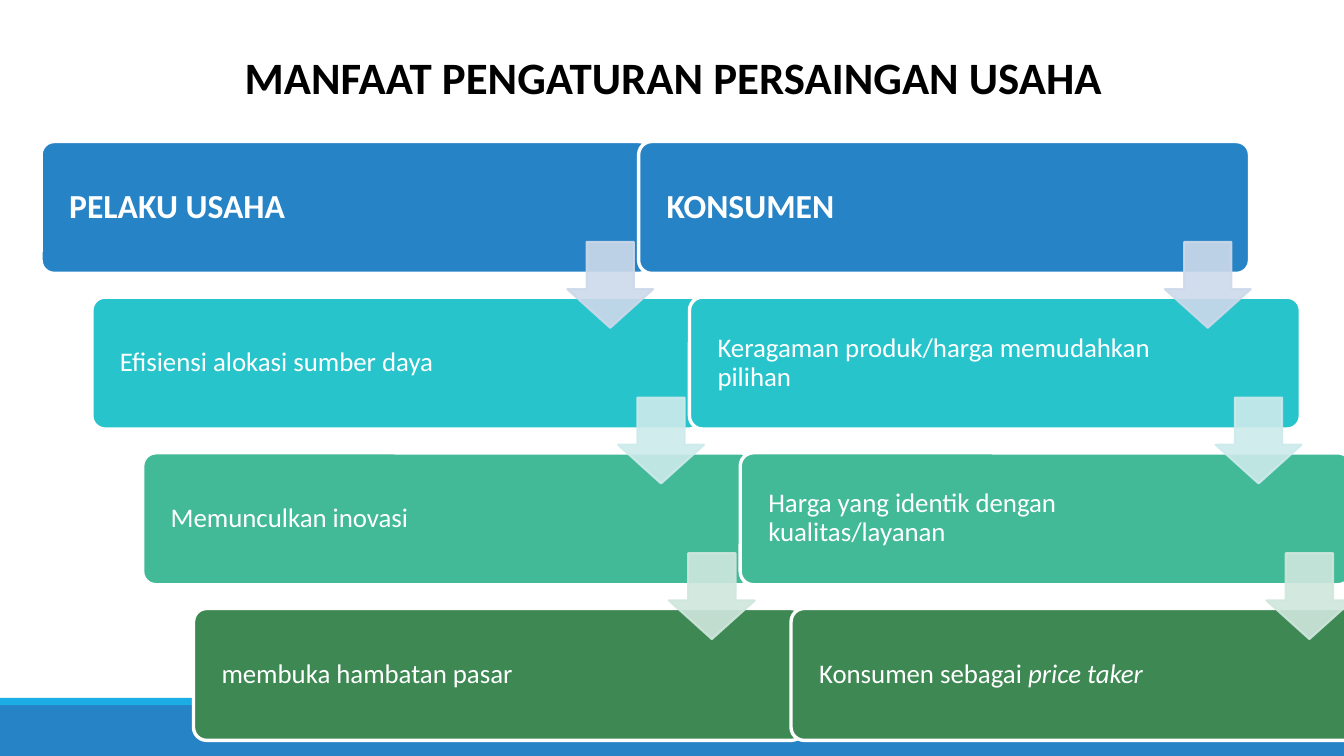
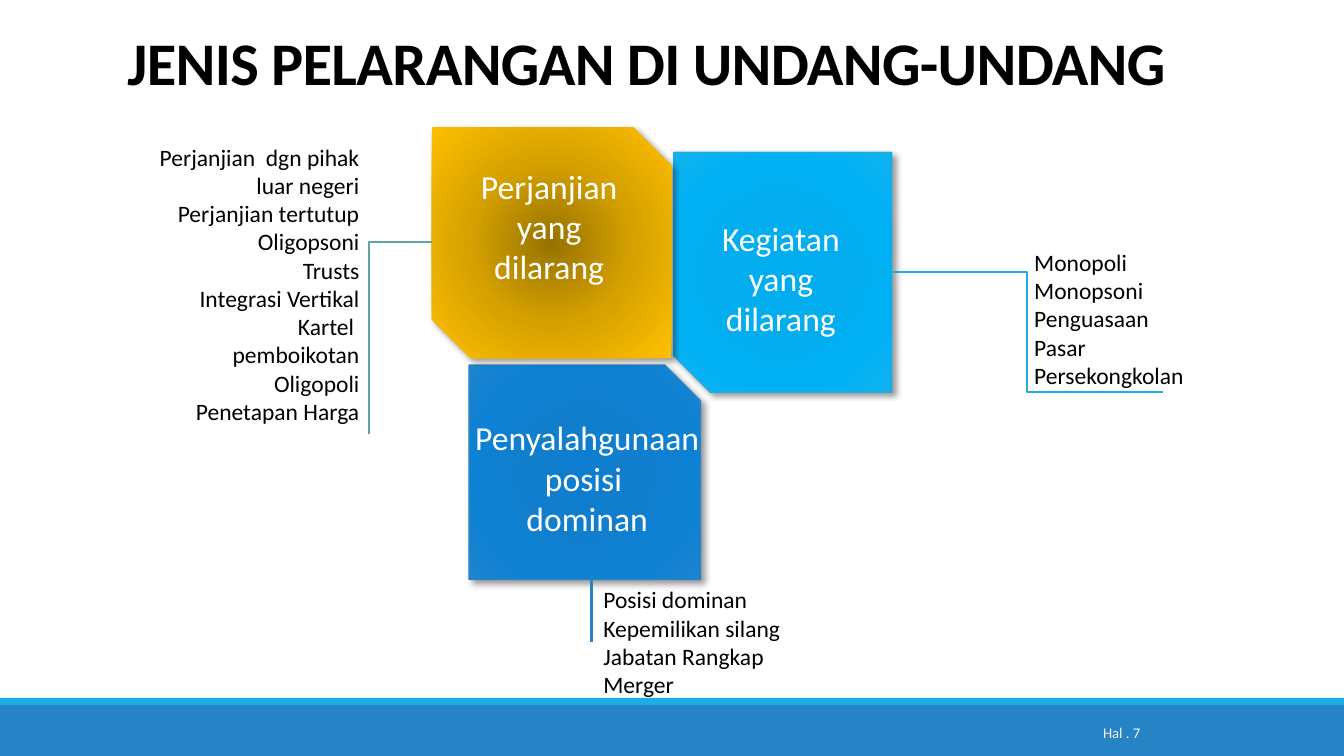
from pptx import Presentation
from pptx.dml.color import RGBColor
from pptx.enum.shapes import MSO_CONNECTOR, MSO_SHAPE
from pptx.enum.text import MSO_ANCHOR, PP_ALIGN
from pptx.oxml import parse_xml
from pptx.oxml.ns import nsdecls, qn
from pptx.oxml.xmlchemy import OxmlElement
from pptx.util import Inches, Pt

RECT, ROUND = MSO_SHAPE.RECTANGLE, MSO_SHAPE.ROUNDED_RECTANGLE
DOWN_ARROW = MSO_SHAPE.DOWN_ARROW
SNIP_ONE, SNIP_DIAGONAL = MSO_SHAPE.SNIP_1_RECTANGLE, MSO_SHAPE.SNIP_2_DIAG_RECTANGLE
STRAIGHT, ELBOW = MSO_CONNECTOR.STRAIGHT, MSO_CONNECTOR.ELBOW
LEFT, CENTER, RIGHT = PP_ALIGN.LEFT, PP_ALIGN.CENTER, PP_ALIGN.RIGHT
TOP, MIDDLE, BOTTOM = MSO_ANCHOR.TOP, MSO_ANCHOR.MIDDLE, MSO_ANCHOR.BOTTOM

WIDTH, HEIGHT = Inches(11.11), Inches(6.25)
FONT = "Calibri"
BLUE, SKY, WHITE, BLACK = "2683C6", "1CADE4", "FFFFFF", "000000"
PALE, TEAL = "F2F2F2", "62A39F"

PANEL_LEFT, PANEL_TOP = 3.06, 18.72
PANEL_WIDTH, PANEL_HEIGHT = 45.45, 17.44
CASCADE_STEP, ROW_STEP, SHIFT = 44.46, 20.59, 3.78
PANEL_COLORS = [BLUE, "28C4CC", "42BA97", "3E8853"]
ARROW_COLORS = ["CDD9EA", "CDEAEC", "CFE7DD"]
CASCADES = [
    ["PELAKU USAHA", "Efisiensi alokasi sumber daya", "Memunculkan inovasi",
     "membuka hambatan pasar"],
    ["KONSUMEN", "Keragaman produk/harga memudahkan pilihan",
     "Harga yang identik dengan kualitas/layanan",
     ("Konsumen sebagai ", "price taker")],
]

TILES = [
    (SNIP_ONE, (34.92, 48.32, 17.19, 28.32), 0, BLUE,
     [(0, "0D7ECF"), (34, "117ECD"), (70, "0D81D4"), (100, "1E84CE")]),
    (SNIP_ONE, (50.14, 20.16, 16.2, 31.68), 180, SKY,
     [(0, "00ADEF"), (34, "03ADEE"), (70, "00B1F5"), (100, "12B1EE")]),
    (SNIP_DIAGONAL, (32.13, 16.8, 17.82, 30.56), 0, None,
     [(0, "977200"), (50, "D7A200"), (100, "FFC000")]),
]
TILE_LABELS = [
    ((33.75, 21.12, 14.22, 17.76), ["Perjanjian yang dilarang"]),
    ((52.21, 28, 11.79, 17.76), ["Kegiatan yang dilarang"]),
    ((34.2, 54.4, 18.99, 17.76), ["Penyalahgunaan posisi ", "dominan"]),
]
DETAILS = [
    ((10.98, 18.08, 16.65, 39.36), RIGHT,
     ["Perjanjian  dgn pihak luar negeri", "Perjanjian tertutup", "Oligopsoni",
      "Trusts", "Integrasi Vertikal", "Kartel ", "pemboikotan", "Oligopoli",
      "Penetapan Harga"]),
    ((76.06, 32, 13.95, 20.48), LEFT,
     ["Monopoli", "Monopsoni", "Penguasaan Pasar", "Persekongkolan"]),
    ((44.01, 76.64, 16.11, 16.64), LEFT,
     ["Posisi dominan", "Kepemilikan silang", "Jabatan Rangkap", "Merger"]),
]
LINKS = [
    (ELBOW, (32.13, 32, 27.45, 57.44), TEAL, "bentConnector2"),
    (ELBOW, (66.34, 36, 86.5, 51.84), SKY, "bentConnector3"),
    (STRAIGHT, (44.01, 76, 44.01, 84.96), BLUE, "line"),
]


def rgb(value):
    return RGBColor.from_string(value)


def shares(box):
    return [round(side * part / 100) for side, part in zip((WIDTH, HEIGHT) * 2, box)]


def set_alpha(color_parent, percent):
    alpha = OxmlElement("a:alpha")
    alpha.set("val", str(percent * 1000))
    color_parent.find(".//" + qn("a:srgbClr")).append(alpha)


def write(frame, lines, size, color, align=LEFT, anchor=TOP, bold=False, leading=None):
    frame.word_wrap = True
    frame.vertical_anchor = anchor
    for index, line in enumerate(lines):
        paragraph = frame.paragraphs[0] if index == 0 else frame.add_paragraph()
        paragraph.alignment = align
        paragraph.line_spacing = leading
        font = paragraph.font
        font.name, font.size, font.bold = FONT, Pt(size), bold
        font.color.rgb = rgb(color)
        plain, *emphasis = (line,) if isinstance(line, str) else line
        paragraph.add_run().text = plain
        for words in emphasis:
            run = paragraph.add_run()
            run.text = words
            run.font.italic = True


def add_text(slide, box, lines, size, color, **style):
    frame = slide.shapes.add_textbox(*shares(box)).text_frame
    write(frame, lines, size, color, **style)
    return frame


def add_block(slide, kind, box, fill, line=None, line_width=1):
    block = slide.shapes.add_shape(kind, *shares(box))
    block.shadow.inherit = False
    block.fill.solid()
    block.fill.fore_color.rgb = rgb(fill)
    if line:
        block.line.color.rgb = rgb(line)
        block.line.width = Pt(line_width)
    else:
        block.line.fill.background()
    return block


def add_panel(slide, left, top, color, line, heading):
    box = (left, top, PANEL_WIDTH, PANEL_HEIGHT)
    panel = add_block(slide, ROUND, box, color, WHITE, 2)
    panel.adjustments[0] = 0.1
    frame = panel.text_frame
    frame.margin_left, frame.margin_right = Inches(0.2), Inches(1.19)
    write(frame, [line], 20 if heading else 16, WHITE, anchor=MIDDLE,
          bold=heading, leading=0.9)


def add_step_arrow(slide, left, top, color):
    arrow = add_block(slide, DOWN_ARROW, (left, top, 6.39, 11.36), color, color, 1.25)
    arrow.adjustments[0], arrow.adjustments[1] = 0.55, 0.45
    properties = arrow._element.spPr
    set_alpha(properties.find(qn("a:solidFill")), 90)
    set_alpha(properties.find(qn("a:ln")), 90)


def add_cascade(slide, left, lines):
    for row, (line, color) in enumerate(zip(lines, PANEL_COLORS)):
        add_panel(slide, left + row * SHIFT, PANEL_TOP + row * ROW_STEP, color,
                  line, row == 0)
    for row, color in enumerate(ARROW_COLORS):
        add_step_arrow(slide, left + 39.15 + row * SHIFT,
                       PANEL_TOP + 13.28 + row * ROW_STEP, color)


def add_tile(slide, kind, box, rotation, line, stops):
    tile = add_block(slide, kind, box, stops[-1][1], line)
    tile.rotation = rotation
    properties = tile._element.spPr
    stop_list = "".join(
        f'<a:gs pos="{position * 1000}"><a:srgbClr val="{color}"/></a:gs>'
        for position, color in stops)
    gradient = parse_xml(
        f'<a:gradFill {nsdecls("a")} rotWithShape="1"><a:gsLst>{stop_list}</a:gsLst>'
        '<a:path path="circle"><a:fillToRect l="50000" t="50000" r="50000" b="50000"/>'
        '</a:path></a:gradFill>')
    properties.replace(properties.find(qn("a:solidFill")), gradient)
    shadow = parse_xml(
        f'<a:outerShdw {nsdecls("a")} blurRad="{Pt(4)}" dist="{Pt(3)}" dir="2700000" '
        f'rotWithShape="0"><a:srgbClr val="{BLACK}"><a:alpha val="40000"/></a:srgbClr>'
        '</a:outerShdw>')
    properties.find(qn("a:effectLst")).append(shadow)


def add_link(slide, kind, ends, color, preset):
    link = slide.shapes.add_connector(kind, *shares(ends))
    link.line.color.rgb = rgb(color)
    link.line.width = Pt(1.25)
    properties = link._element.spPr
    properties.find(qn("a:prstGeom")).set("prst", preset)
    properties.append(OxmlElement("a:effectLst"))


def add_title(slide, box, title, size, **style):
    return add_text(slide, box, [title], size, BLACK, align=CENTER, bold=True, **style)


def new_slide(deck):
    slide = deck.slides.add_slide(deck.slide_layouts[6])
    add_block(slide, RECT, (0, 93.28, 100, 6.72), BLUE)
    add_block(slide, RECT, (0, 92.32, 100, 0.96), SKY)
    return slide


def build_benefits(deck):
    slide = new_slide(deck)
    for column, lines in enumerate(CASCADES):
        add_cascade(slide, PANEL_LEFT + column * CASCADE_STEP, lines)
    add_title(slide, (4.95, 5.76, 90.37, 8.8), "MANFAAT PENGATURAN PERSAINGAN USAHA", 26.7)


def build_prohibitions(deck):
    slide = new_slide(deck)
    add_text(slide, (81.19, 94.24, 10.8, 5.28), ["Hal . 7"], 8.8, PALE, anchor=MIDDLE)
    title = add_title(slide, (6.84, 1.44, 82.54, 12.32),
                      "JENIS PELARANGAN DI UNDANG-UNDANG", 36, anchor=BOTTOM, leading=0.85)
    title.paragraphs[0].runs[0].font._element.set("spc", "-40")
    for tile in TILES:
        add_tile(slide, *tile)
    for box, lines in TILE_LABELS:
        add_text(slide, box, lines, 20, WHITE, align=CENTER)
    for link in LINKS:
        add_link(slide, *link)
    for box, align, lines in DETAILS:
        add_text(slide, box, lines, 14, BLACK, align=align)


def main():
    deck = Presentation()
    deck.slide_width, deck.slide_height = WIDTH, HEIGHT
    build_benefits(deck)
    build_prohibitions(deck)
    deck.save("out.pptx")


if __name__ == "__main__":
    main()
